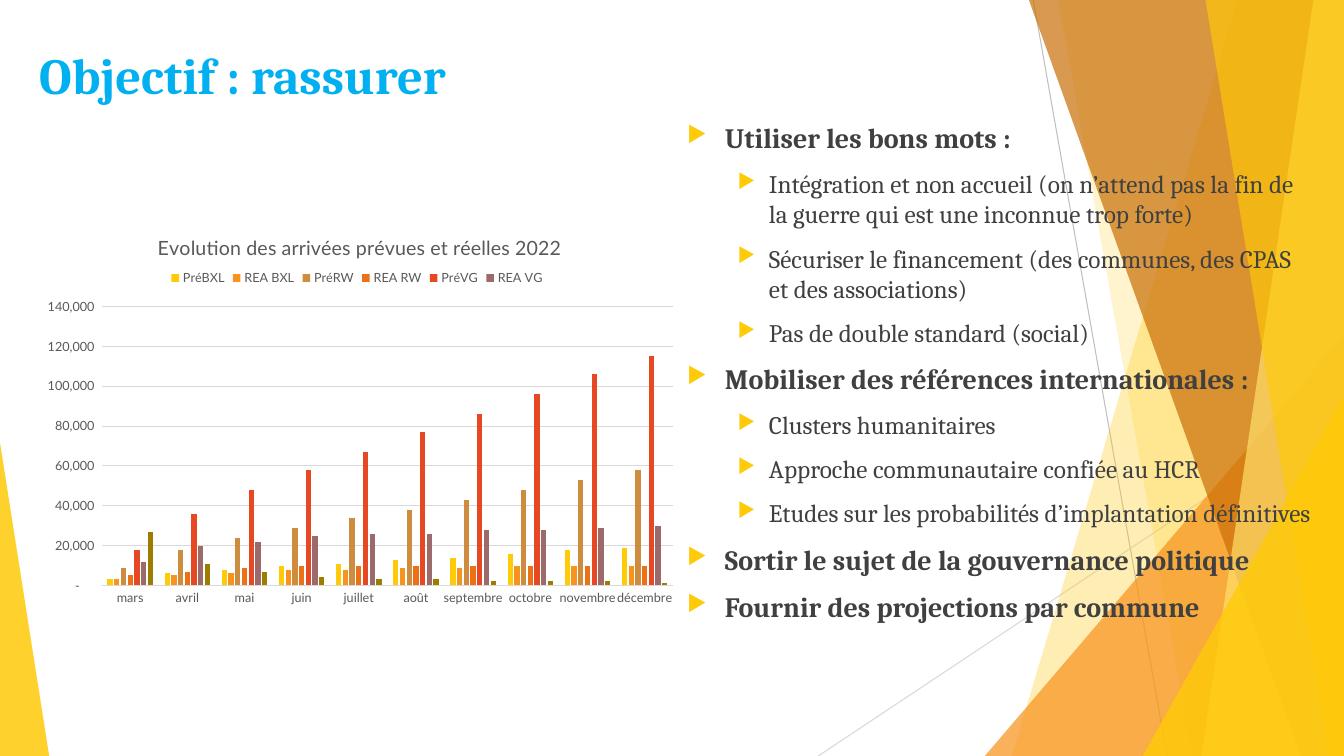
from dataclasses import dataclass

from pptx import Presentation
from pptx.chart.data import CategoryChartData
from pptx.dml.color import RGBColor
from pptx.enum.chart import XL_CHART_TYPE as ChartType
from pptx.enum.chart import XL_LEGEND_POSITION as LegendPos
from pptx.enum.chart import XL_TICK_MARK as Tick
from pptx.enum.shapes import MSO_CONNECTOR as Connector
from pptx.enum.shapes import MSO_SHAPE as Shape
from pptx.enum.text import MSO_ANCHOR as Anchor
from pptx.oxml import parse_xml
from pptx.oxml.ns import nsdecls, qn
from pptx.util import Cm, Pt

W, H = 33.87, 19.05
SERIF, SANS = "Cambria", "Lato"
GOLD, GREY, RULE = "FFCA08", "595959", "D9D9D9"


@dataclass
class Ray:
    x1: float
    y1: float
    x2: float
    y2: float
    color: str


@dataclass
class Facet:
    top_x: float
    bottom_x: float
    color: str
    alpha: int


@dataclass
class Corner:
    x: float
    y: float
    w: float
    apex: float
    color: str
    alpha: int


@dataclass
class Level:
    size: int
    bold: bool
    margin: float
    hang: float


@dataclass
class Series:
    name: str
    color: str
    thousands: list[int]


DECOR = [
    Ray(26.04, 0, 29.41, H, "BFBFBF"),
    Ray(W, 10.24, 20.62, H, RULE),
    Facet(31.19, 25.5, GOLD, 30),
    Facet(26.67, 30.05, GOLD, 20),
    Corner(24.82, 8.46, 9.05, 1, "F8931D", 72),
    Facet(25.93, 32.79, "CA6F06", 70),
    Facet(33.1, 30.28, "FFDF6B", 70),
    Facet(30.38, 33.48, GOLD, 65),
    Corner(28.8, 9.98, 5.07, 1, GOLD, 80),
    Corner(0, 11.15, 1.24, 0, GOLD, 85),
]

LEVELS = [Level(20, True, 0.95, 0.95), Level(18, False, 2.06, 0.79)]
POINTS = [
    (0, "Utiliser les bons mots :"),
    (1, "Intégration et non accueil (on n’attend pas la fin de la guerre qui est une inconnue trop forte)"),
    (1, "Sécuriser le financement (des communes, des CPAS et des associations)"),
    (1, "Pas de double standard (social)"),
    (0, "Mobiliser des références internationales :"),
    (1, "Clusters humanitaires"),
    (1, "Approche communautaire confiée au HCR"),
    (1, "Etudes sur les probabilités d’implantation définitives"),
    (0, "Sortir le sujet de la gouvernance politique"),
    (0, "Fournir des projections par commune"),
]

MONTHS = ["mars", "avril", "mai", "juin", "juillet", "août",
          "septembre", "octobre", "novembre", "décembre"]
SERIES = [
    Series("PréBXL", GOLD, [3, 6, 8, 10, 11, 13, 14, 16, 18, 19]),
    Series("REA BXL", "F8931D", [3, 5, 6, 8, 8, 9, 9, 10, 10, 10]),
    Series("PréRW", "CE8D3E", [9, 18, 24, 29, 34, 38, 43, 48, 53, 58]),
    Series("REA RW", "EC7016", [5, 7, 9, 10, 10, 10, 10, 10, 10, 10]),
    Series("PréVG", "E64823", [18, 36, 48, 58, 67, 77, 86, 96, 106, 115]),
    Series("REA VG", "9C6A6A", [12, 20, 22, 25, 26, 26, 28, 28, 29, 30]),
    Series("Series 7", "9E7C00", [27, 11, 7, 4, 3, 3, 2, 2, 2, 1]),
]


def rgb(color: str) -> RGBColor:
    return RGBColor.from_string(color)


def set_font(font, name: str, size: float, color: str, bold: bool = False) -> None:
    font.name, font.size, font.bold = name, Pt(size), bold
    font.color.rgb = rgb(color)


def set_line(line, color: str) -> None:
    line.color.rgb = rgb(color)
    line.width = Pt(0.75)


def paint(sp, color: str, alpha: int) -> None:
    sp.shadow.inherit = False
    sp.fill.solid()
    sp.fill.fore_color.rgb = rgb(color)
    clr = sp._element.spPr.find(qn("a:solidFill"))[0]
    clr.append(parse_xml(f'<a:alpha {nsdecls("a")} val="{alpha * 1000}"/>'))
    sp.line.fill.background()


def draw_ray(s, ray: Ray) -> None:
    ends = [Cm(v) for v in (ray.x1, ray.y1, ray.x2, ray.y2)]
    sp = s.shapes.add_connector(Connector.STRAIGHT, *ends)
    set_line(sp.line, ray.color)
    sp._element.spPr.append(parse_xml(f'<a:effectLst {nsdecls("a")}/>'))


def draw_facet(s, facet: Facet) -> None:
    ff = s.shapes.build_freeform(Cm(facet.top_x), 0)
    ff.add_line_segments([(Cm(W), 0), (Cm(W), Cm(H)), (Cm(facet.bottom_x), Cm(H))])
    paint(ff.convert_to_shape(), facet.color, facet.alpha)


def draw_corner(s, c: Corner) -> None:
    sp = s.shapes.add_shape(Shape.ISOSCELES_TRIANGLE, Cm(c.x), Cm(c.y), Cm(c.w), Cm(H - c.y))
    sp.adjustments[0] = c.apex
    paint(sp, c.color, c.alpha)


def add_text(s, x: float, y: float, w: float, h: float):
    tf = s.shapes.add_textbox(Cm(x), Cm(y), Cm(w), Cm(h)).text_frame
    tf.word_wrap = True
    tf.vertical_anchor = Anchor.TOP
    return tf


def add_bullet(p, level: Level) -> None:
    pPr = p._p.get_or_add_pPr()
    pPr.set("marL", str(Cm(level.margin)))
    pPr.set("indent", str(-Cm(level.hang)))
    for xml in (f'<a:buClr {nsdecls("a")}><a:srgbClr val="{GOLD}"/></a:buClr>',
                f'<a:buSzPct {nsdecls("a")} val="80000"/>',
                f'<a:buChar {nsdecls("a")} char="▶"/>'):
        pPr.append(parse_xml(xml))


def add_points(s) -> None:
    tf = add_text(s, 17.07, 2.92, 16.26, 13.79)
    for i, (depth, text) in enumerate(POINTS):
        p = tf.add_paragraph() if i else tf.paragraphs[0]
        level = LEVELS[depth]
        p.level = depth
        add_bullet(p, level)
        p.space_before = Pt(10 if i else 0)
        r = p.add_run()
        r.text = text
        set_font(r.font, SERIF, level.size, "404040", level.bold)


def place(el, index: int, **spots: float) -> None:
    for old in el.findall(qn("c:layout")):
        el.remove(old)
    target = '<c:layoutTarget val="inner"/>' if "w" in spots else ""
    modes = "".join(f'<c:{k}Mode val="edge"/>' for k in "xy")
    values = "".join(f'<c:{k} val="{v}"/>' for k, v in spots.items())
    el.insert(index, parse_xml(f'<c:layout {nsdecls("c")}><c:manualLayout>{target}{modes}{values}'
                               '</c:manualLayout></c:layout>'))


def add_arrivals_chart(s) -> None:
    data = CategoryChartData(number_format="#,##0")
    data.categories = MONTHS
    for item in SERIES:
        data.add_series(item.name, [v * 1000 for v in item.thousands])
    chart = s.shapes.add_chart(ChartType.COLUMN_CLUSTERED, Cm(0.74), Cm(5.28),
                               Cm(16.56), Cm(10.19), data).chart
    set_font(chart.font, SANS, 10, "000000")

    chart.has_title = True
    title = chart.chart_title
    r = title.text_frame.paragraphs[0].add_run()
    r.text = "Evolution des arrivées prévues et réelles 2022"
    set_font(r.font, SANS, 14, GREY)
    place(title._element, 1, x=0.19, y=0.05)

    chart.has_legend = True
    legend = chart.legend
    legend.position = LegendPos.TOP
    legend.include_in_layout = False
    set_font(legend.font, SANS, 9, GREY)
    legend._element.insert(1, parse_xml(
        f'<c:legendEntry {nsdecls("c")}><c:idx val="6"/><c:delete val="1"/></c:legendEntry>'))
    place(legend._element, 2, x=0.21, y=0.14)

    plot = chart.plots[0]
    plot.gap_width, plot.overlap, plot.vary_by_categories = 219, -27, False
    for ser, item in zip(plot.series, SERIES):
        ser.format.fill.solid()
        ser.format.fill.fore_color.rgb = rgb(item.color)
    place(chart._chartSpace.chart.plotArea, 0, x=0.11, y=0.24, w=0.87, h=0.69)

    months, people = chart.category_axis, chart.value_axis
    for axis in (months, people):
        axis.major_tick_mark = axis.minor_tick_mark = Tick.NONE
        set_font(axis.tick_labels.font, SANS, 9, GREY)
    set_line(months.format.line, RULE)
    people.format.line.fill.background()
    set_line(people.major_gridlines.format.line, RULE)
    people.minimum_scale, people.maximum_scale, people.major_unit = 0, 140000, 20000
    people.tick_labels.number_format = '_-* #,##0_-;\\-* #,##0_-;_-* "-"??_-;_-@_'
    people.tick_labels.number_format_is_linked = False


def main() -> None:
    prs = Presentation()
    prs.slide_width, prs.slide_height = Cm(W), Cm(H)
    s = prs.slides.add_slide(prs.slide_layouts[6])
    draw = {Ray: draw_ray, Facet: draw_facet, Corner: draw_corner}
    for item in DECOR:
        draw[type(item)](s, item)
    r = add_text(s, 0.74, 0.99, 24.77, 2.24).paragraphs[0].add_run()
    r.text = "Objectif : rassurer"
    set_font(r.font, SERIF, 36, "00B0F0", True)
    add_points(s)
    add_arrivals_chart(s)
    prs.save("out.pptx")


if __name__ == "__main__":
    main()
